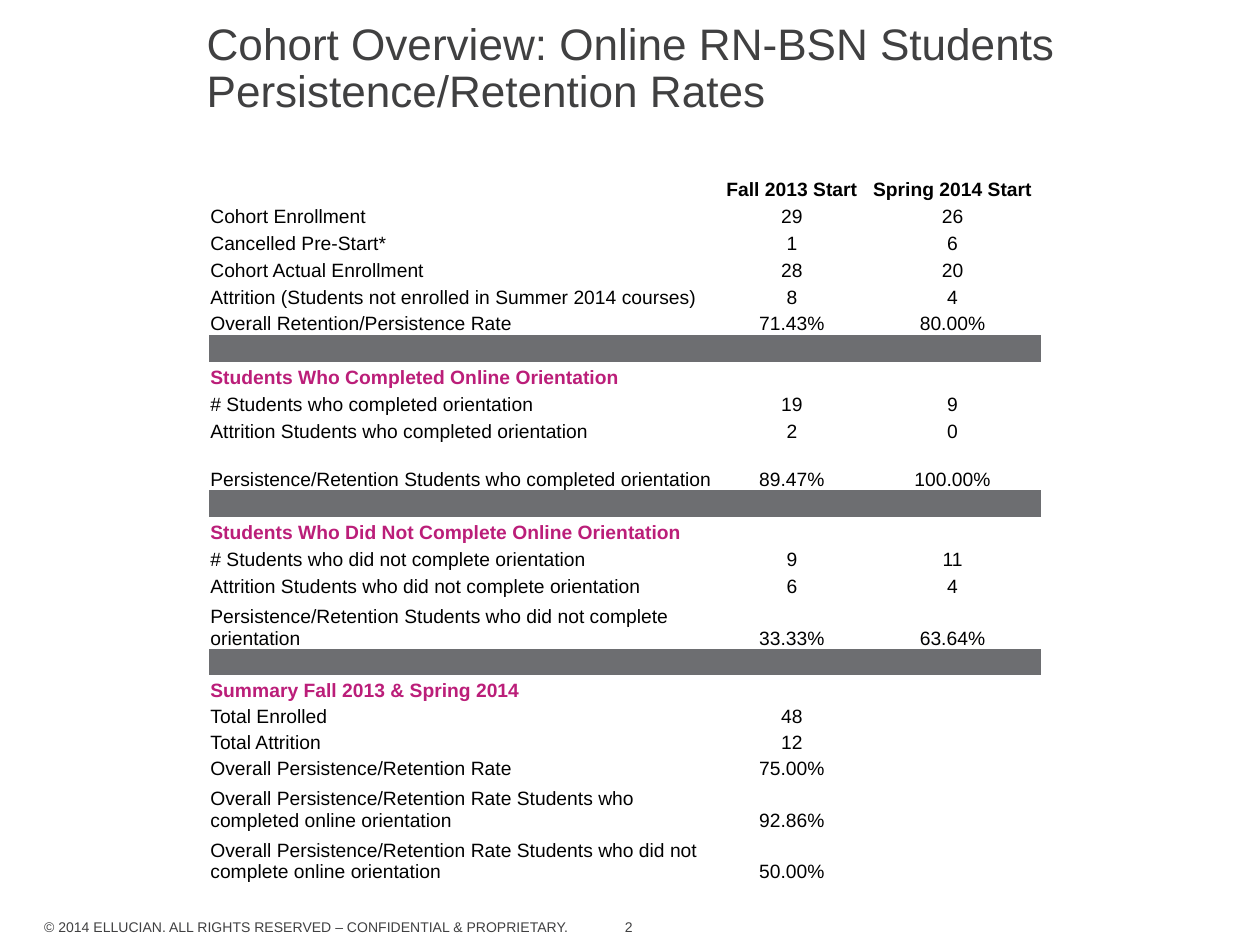
from pptx import Presentation
from pptx.dml.color import RGBColor
from pptx.enum.text import MSO_ANCHOR as Anchor, PP_ALIGN as Align
from pptx.util import Inches, Pt

COLORS = {"text": "404041", "cell": "000000", "heading": "BB1E79", "band": "6D6E71"}
FONT = "Arial"
UNIT = 0.05  # inches per grid step: 200 columns by 150 rows
NO_GRID_STYLE = "{2D5ABB26-0587-4C30-8999-92F81FD0307C}"

COLUMN_WIDTHS = [81, 23, 28]
HEADER_HEIGHT, ROW_HEIGHT, SUMMARY_HEIGHT = 7.48, 4.26, 4.14
GAP_HEIGHT, TWO_LINE_HEIGHT = 7.6, 8.2

# Each row: kind, height, cell texts
ROWS = [
    ("header", HEADER_HEIGHT, ["", "Fall 2013 Start", "Spring 2014 Start"]),
    ("data", ROW_HEIGHT, ["Cohort Enrollment", "29", "26"]),
    ("data", ROW_HEIGHT, ["Cancelled Pre-Start*", "1", "6"]),
    ("data", ROW_HEIGHT, ["Cohort Actual Enrollment", "28", "20"]),
    ("data", ROW_HEIGHT, ["Attrition (Students not enrolled in Summer 2014 courses)", "8", "4"]),
    ("data", ROW_HEIGHT, ["Overall Retention/Persistence Rate", "71.43%", "80.00%"]),
    ("band", ROW_HEIGHT, ["", "", ""]),
    ("heading", ROW_HEIGHT, ["Students Who Completed Online Orientation", "", ""]),
    ("data", ROW_HEIGHT, ["# Students who completed orientation", "19", "9"]),
    ("data", ROW_HEIGHT, ["Attrition Students who completed orientation", "2", "0"]),
    ("data", GAP_HEIGHT,
     ["Persistence/Retention Students who completed orientation", "89.47%", "100.00%"]),
    ("band", ROW_HEIGHT, ["", "", ""]),
    ("heading", ROW_HEIGHT, ["Students Who Did Not Complete Online Orientation", "", ""]),
    ("data", ROW_HEIGHT, ["# Students who did not complete orientation", "9", "11"]),
    ("data", ROW_HEIGHT, ["Attrition Students who did not complete orientation", "6", "4"]),
    ("data", TWO_LINE_HEIGHT,
     ["Persistence/Retention Students who did not complete orientation", "33.33%", "63.64%"]),
    ("band", SUMMARY_HEIGHT, ["", "", ""]),
    ("heading", SUMMARY_HEIGHT, ["Summary Fall 2013 & Spring 2014", "", ""]),
    ("data", SUMMARY_HEIGHT, ["Total Enrolled", "48", ""]),
    ("data", SUMMARY_HEIGHT, ["Total Attrition", "12", ""]),
    ("data", SUMMARY_HEIGHT, ["Overall Persistence/Retention Rate", "75.00%", ""]),
    ("data", TWO_LINE_HEIGHT,
     ["Overall Persistence/Retention Rate Students who completed online orientation",
      "92.86%", ""]),
    ("data", TWO_LINE_HEIGHT,
     ["Overall Persistence/Retention Rate Students who did not complete online orientation",
      "50.00%", ""]),
]


def grid(steps):
    """Length of a number of grid steps."""
    return Inches(steps * UNIT)


class SlideBuilder:
    def __init__(self, presentation):
        self.slide = presentation.slides.add_slide(presentation.slide_layouts[5])

    def style(self, paragraph, size, color, bold=False):
        for run in paragraph.runs:
            run.font.name = FONT
            run.font.size = Pt(size)
            run.font.bold = bold
            run.font.color.rgb = RGBColor.from_string(COLORS[color])

    def frame(self, shape, text, anchor, wrap):
        frame = shape.text_frame
        frame.text = text
        frame.word_wrap = wrap
        frame.vertical_anchor = anchor
        frame.margin_left = frame.margin_right = 0
        frame.margin_top = frame.margin_bottom = 0
        return frame.paragraphs[0]

    def title(self, text, left, top, width, height):
        shape = self.slide.shapes.title
        shape.left, shape.top = grid(left), grid(top)
        shape.width, shape.height = grid(width), grid(height)
        paragraph = self.frame(shape, text, Anchor.TOP, True)
        paragraph.alignment = Align.LEFT
        paragraph.line_spacing = 0.89
        self.style(paragraph, 25.2, "text")

    def footer(self, text, left, top, width, height, wrap=True):
        shape = self.slide.shapes.add_textbox(
            grid(left), grid(top), grid(width), grid(height))
        self.style(self.frame(shape, text, Anchor.BOTTOM, wrap), 8, "text")

    def table(self, rows, widths, left, top):
        height = sum(row_height for _, row_height, _ in rows)
        shape = self.slide.shapes.add_table(
            len(rows), len(widths), grid(left), grid(top), grid(sum(widths)), grid(height))
        table = shape.table
        table.first_row = table.horz_banding = False
        table._tbl.tblPr.find("{*}tableStyleId").text = NO_GRID_STYLE
        for column, width in zip(table.columns, widths):
            column.width = grid(width)
        for row, (kind, row_height, texts) in zip(table.rows, rows):
            row.height = grid(row_height)
            for index, (cell, text) in enumerate(zip(row.cells, texts)):
                self.cell(cell, text, kind, Align.CENTER if index else Align.LEFT)

    def cell(self, cell, text, kind, alignment):
        cell.margin_left = cell.margin_right = cell.margin_top = Inches(0.01)
        cell.margin_bottom = 0
        cell.vertical_anchor = Anchor.BOTTOM
        if kind == "band":
            cell.fill.solid()
            cell.fill.fore_color.rgb = RGBColor.from_string(COLORS["band"])
        else:
            cell.fill.background()
        paragraph = cell.text_frame.paragraphs[0]
        paragraph.alignment = alignment
        if text:
            paragraph.text = text
            color = "heading" if kind == "heading" else "cell"
            self.style(paragraph, 11, color, bold=kind != "data")
        else:
            # Keeps an empty cell from stretching its row
            paragraph._p.get_or_add_endParaRPr().set("sz", "1100")


def main():
    presentation = Presentation()
    presentation.slide_width, presentation.slide_height = Inches(10), Inches(7.5)
    builder = SlideBuilder(presentation)
    builder.footer("2", 99.2, 145.8, 2.8, 2.6, wrap=False)
    builder.footer("© 2014 ELLUCIAN. ALL RIGHTS RESERVED – CONFIDENTIAL & PROPRIETARY.",
                   7, 145.8, 97.4, 2.6)
    builder.title("Cohort Overview: Online RN-BSN Students Persistence/Retention Rates",
                  32.8, 3.6, 138.8, 22.8)
    builder.table(ROWS, COLUMN_WIDTHS, 33.2, 24.4)
    presentation.save("out.pptx")


if __name__ == "__main__":
    main()
